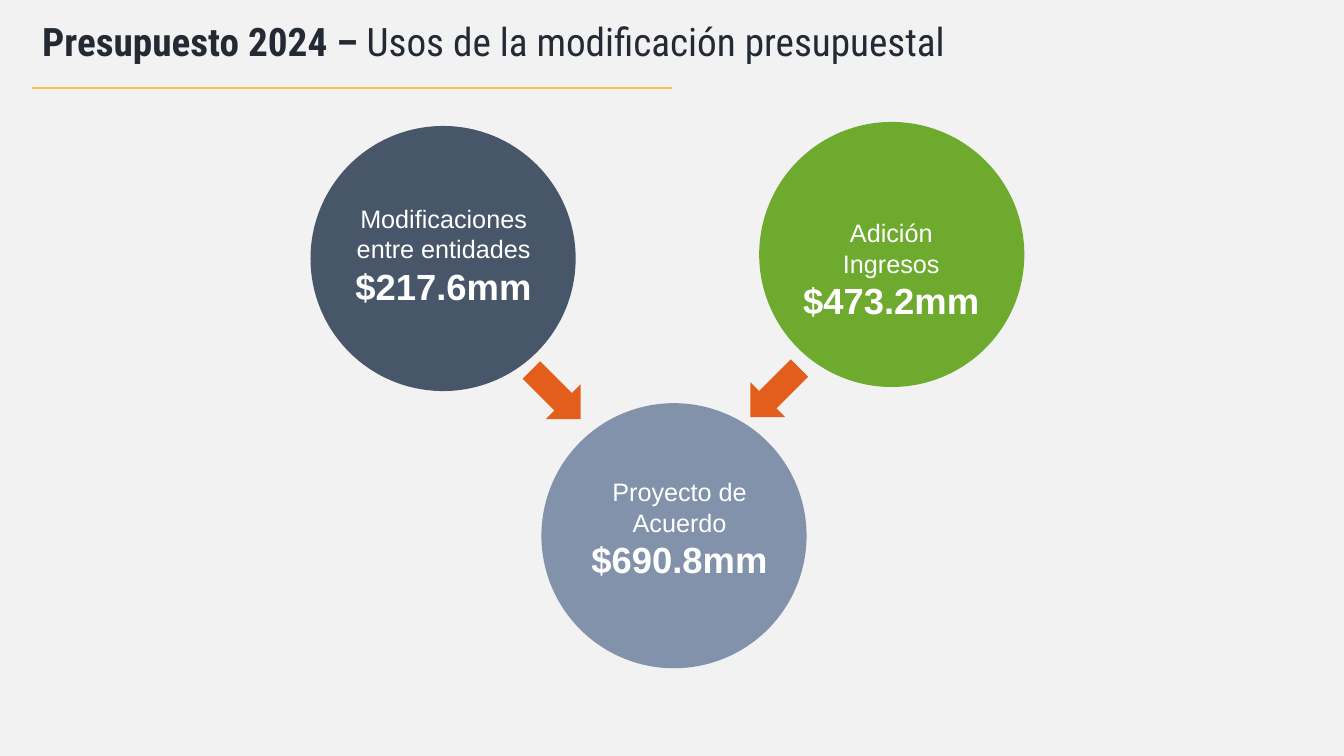
from typing import NamedTuple

from lxml.etree import SubElement
from pptx import Presentation
from pptx.dml.color import RGBColor
from pptx.enum.shapes import MSO_CONNECTOR, MSO_SHAPE
from pptx.enum.text import MSO_ANCHOR, PP_ALIGN
from pptx.oxml.ns import qn
from pptx.util import Inches, Pt

PALE = RGBColor(0xF2, 0xF2, 0xF2)
WHITE = RGBColor(0xFF, 0xFF, 0xFF)
INK = RGBColor(0x23, 0x2A, 0x34)
GOLD = RGBColor(0xF5, 0xC1, 0x57)
SLATE = RGBColor(0x48, 0x56, 0x6A)
GREEN = RGBColor(0x6E, 0xAA, 0x2E)
STEEL = RGBColor(0x81, 0x92, 0xAA)
ORANGE = RGBColor(0xE2, 0x5E, 0x1A)

SIZE = 2.63  # circle diameter


class Box(NamedTuple):
    left: float
    top: float
    width: float
    height: float


class Fund(NamedTuple):
    left: float
    top: float
    color: RGBColor
    label: str
    amount: str
    text: Box


class Arrow(NamedTuple):
    left: float
    top: float
    angle: float


FUNDS = [
    Fund(5.37, 4, STEEL, "Proyecto de Acuerdo", "$690.8mm", Box(5.58, 4.68, 2.32, 1.14)),
    Fund(3.08, 1.25, SLATE, "Modificaciones entre entidades", "$217.6mm",
         Box(3.26, 1.97, 2.28, 1.14)),
    Fund(7.53, 1.21, GREEN, "Adición Ingresos", "$473.2mm", Box(7.85, 2.11, 1.98, 1.14)),
]
ARROWS = [Arrow(5.17, 3.67, 45), Arrow(7.34, 3.65, 135)]


def add_solid(slide, kind: MSO_SHAPE, box: Box, color: RGBColor, angle: float = 0) -> None:
    shape = slide.shapes.add_shape(kind, *map(Inches, box))
    shape.shadow.inherit = False
    shape.fill.solid()
    shape.fill.fore_color.rgb = color
    shape.line.fill.background()
    shape.rotation = angle


def add_frame(slide, box: Box):
    frame = slide.shapes.add_textbox(*map(Inches, box)).text_frame
    frame.word_wrap = True
    return frame


def set_font(font, name: str, size: float, color: RGBColor, bold: bool) -> None:
    font.name = name
    font.size = Pt(size)
    font.color.rgb = color
    font.bold = bold


def add_fund(slide, fund: Fund) -> None:
    add_solid(slide, MSO_SHAPE.OVAL, Box(fund.left, fund.top, SIZE, SIZE), fund.color)
    frame = add_frame(slide, fund.text)
    frame.text = f"{fund.label}\n{fund.amount}"
    for para, size, bold in zip(frame.paragraphs, (18, 26), (False, True)):
        para.alignment = PP_ALIGN.CENTER
        set_font(para.runs[0].font, "Arial", size, WHITE, bold)


def add_title(slide) -> None:
    frame = add_frame(slide, Box(0.32, 0, 12.41, 0.86))
    frame.vertical_anchor = MSO_ANCHOR.MIDDLE
    para = frame.paragraphs[0]
    para.line_spacing = 0.9
    parts = [("Presupuesto 2024 – ", True), ("Usos de la modificación presupuestal", False)]
    for text, bold in parts:
        run = para.add_run()
        run.text = text
        set_font(run.font, "Roboto Condensed", 28, INK, bold)


def add_rule(slide) -> None:
    ends = map(Inches, (0.32, 0.87, 6.67, 0.87))
    rule = slide.shapes.add_connector(MSO_CONNECTOR.STRAIGHT, *ends)
    rule.line.color.rgb = GOLD
    rule.line.width = Pt(1.5)
    SubElement(rule._element.spPr, qn("a:effectLst"))


def main() -> None:
    deck = Presentation()
    deck.slide_width, deck.slide_height = Inches(13.33), Inches(7.5)
    slide = deck.slides.add_slide(deck.slide_layouts[6])
    slide.background.fill.solid()
    slide.background.fill.fore_color.rgb = PALE

    # Heading
    add_title(slide)
    add_rule(slide)

    # Sources and total
    for fund in FUNDS:
        add_fund(slide, fund)

    # Arrows towards the total
    for arrow in ARROWS:
        box = Box(arrow.left, arrow.top, 0.69, 0.49)
        add_solid(slide, MSO_SHAPE.RIGHT_ARROW, box, ORANGE, arrow.angle)

    deck.save("out.pptx")


if __name__ == "__main__":
    main()
